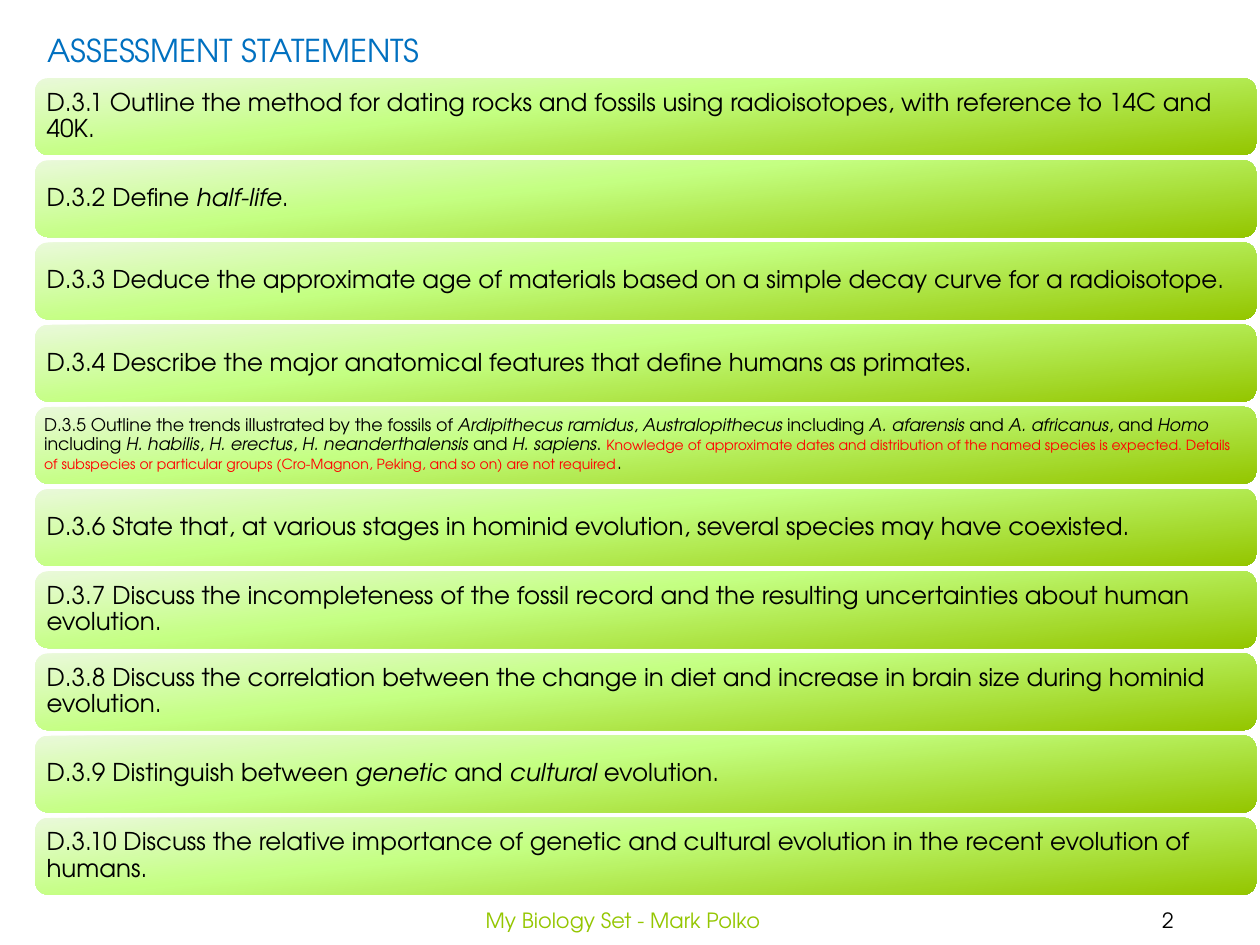
from lxml import etree
from pptx import Presentation
from pptx.dml.color import RGBColor
from pptx.enum.shapes import MSO_SHAPE
from pptx.enum.text import MSO_ANCHOR, PP_ALIGN
from pptx.oxml.ns import qn
from pptx.util import Inches, Pt

ROUNDED = MSO_SHAPE.ROUNDED_RECTANGLE
TOP, MIDDLE = MSO_ANCHOR.TOP, MSO_ANCHOR.MIDDLE
LEFT, CENTER = PP_ALIGN.LEFT, PP_ALIGN.CENTER

FONT = "TeX Gyre Adventor"
COLORS = {"text": "000000", "title": "0070C0", "footer": "94C600", "note": "FF0000"}
GRADIENT = [(0, "EAF9DA"), (40, "C4FF82"), (100, "94C600")]
GRADIENT_ANGLE = 84

ITALIC_MARK = "*"
TITLE = "ASSESSMENT STATEMENTS"
FOOTER = "My Biology Set - Mark Polko"
PAGE = "2"
STATEMENTS = [
    "D.3.1 Outline the method for dating rocks and fossils using radioisotopes, "
    "with reference to 14C and 40K.",
    "D.3.2 Define *half-life*.",
    "D.3.3 Deduce the approximate age of materials based on a simple decay curve for a radioisotope.",
    "D.3.4 Describe the major anatomical features that define humans as primates.",
    "D.3.5 Outline the trends illustrated by the fossils of *Ardipithecus ramidus*, "
    "*Australopithecus *including *A. afarensis *and *A. africanus*, and *Homo *including "
    "*H. habilis*, *H. erectus*, *H. neanderthalensis *and *H. sapiens*. ",
    "D.3.6 State that, at various stages in hominid evolution, several species may have coexisted.",
    "D.3.7 Discuss the incompleteness of the fossil record and the resulting uncertainties "
    "about human evolution.",
    "D.3.8 Discuss the correlation between the change in diet and increase in brain size "
    "during hominid evolution.",
    "D.3.9 Distinguish between *genetic *and *cultural *evolution.",
    "D.3.10 Discuss the relative importance of genetic and cultural evolution in the recent "
    "evolution of humans.",
]
NOTES = {
    4: "Knowledge of approximate dates and distribution of the named species is expected. "
       "Details of subspecies or particular groups (Cro-Magnon, Peking, and so on) are not required",
}

BAR_LEFT, BAR_WIDTH, BAR_HEIGHT = 0.28, 9.69, 0.61
FIRST_TOP, LAST_TOP = 0.62, 6.49
PITCH = (LAST_TOP - FIRST_TOP) / (len(STATEMENTS) - 1)


def add_text(p, text, size=14, color="text", align=LEFT):
    p.alignment = align
    for i, part in enumerate(text.split(ITALIC_MARK)):
        if part:
            r = p.add_run()
            r.text = part
            r.font.name = FONT
            r.font.size = Pt(size)
            r.font.italic = i % 2 == 1
            r.font.color.rgb = RGBColor.from_string(COLORS[color])


def add_box(s, text, left, top, width, height, anchor=MIDDLE, wrap=True, **fmt):
    tf = s.shapes.add_textbox(Inches(left), Inches(top), Inches(width), Inches(height)).text_frame
    tf.word_wrap = wrap
    tf.vertical_anchor = anchor
    add_text(tf.paragraphs[0], text, **fmt)


def fill_gradient(sp):
    sp.fill.gradient()
    grad = sp.element.spPr.find(qn("a:gradFill"))
    for child in list(grad):
        grad.remove(child)
    stops = etree.SubElement(grad, qn("a:gsLst"))
    for pos, color in GRADIENT:
        stop = etree.SubElement(stops, qn("a:gs"), pos=str(pos * 1000))
        etree.SubElement(stop, qn("a:srgbClr"), val=color)
    etree.SubElement(grad, qn("a:lin"), ang=str(GRADIENT_ANGLE * 60000), scaled="0")


def add_statement(s, text, top, note=None):
    sp = s.shapes.add_shape(ROUNDED, Inches(BAR_LEFT), Inches(top),
                            Inches(BAR_WIDTH), Inches(BAR_HEIGHT))
    sp.shadow.inherit = False
    sp.line.fill.background()
    fill_gradient(sp)
    tf = sp.text_frame
    tf.word_wrap = True
    tf.vertical_anchor = MIDDLE
    inset = Inches(0.04 if note else 0.06)
    tf.margin_left = tf.margin_right = tf.margin_top = tf.margin_bottom = inset
    p = tf.paragraphs[0]
    p.line_spacing = 0.9
    add_text(p, text, size=10 if note else 14)
    if note:
        add_text(p, note, size=8, color="note")
        add_text(p, ".", size=10)


def main():
    prs = Presentation()
    prs.slide_width, prs.slide_height = Inches(10), Inches(7.5)
    s = prs.slides.add_slide(prs.slide_layouts[6])
    add_box(s, PAGE, 8.54, 7.1, 1.46, 0.4, size=12, align=CENTER)
    add_box(s, FOOTER, 3.03, 7.1, 3.83, 0.4, size=12, color="footer", align=CENTER)
    add_box(s, TITLE, 0.28, 0.2, 3.21, 0.4, anchor=TOP, wrap=False, size=18, color="title")
    for i, text in enumerate(STATEMENTS):
        add_statement(s, text, FIRST_TOP + i * PITCH, NOTES.get(i))
    prs.save("out.pptx")


if __name__ == "__main__":
    main()
